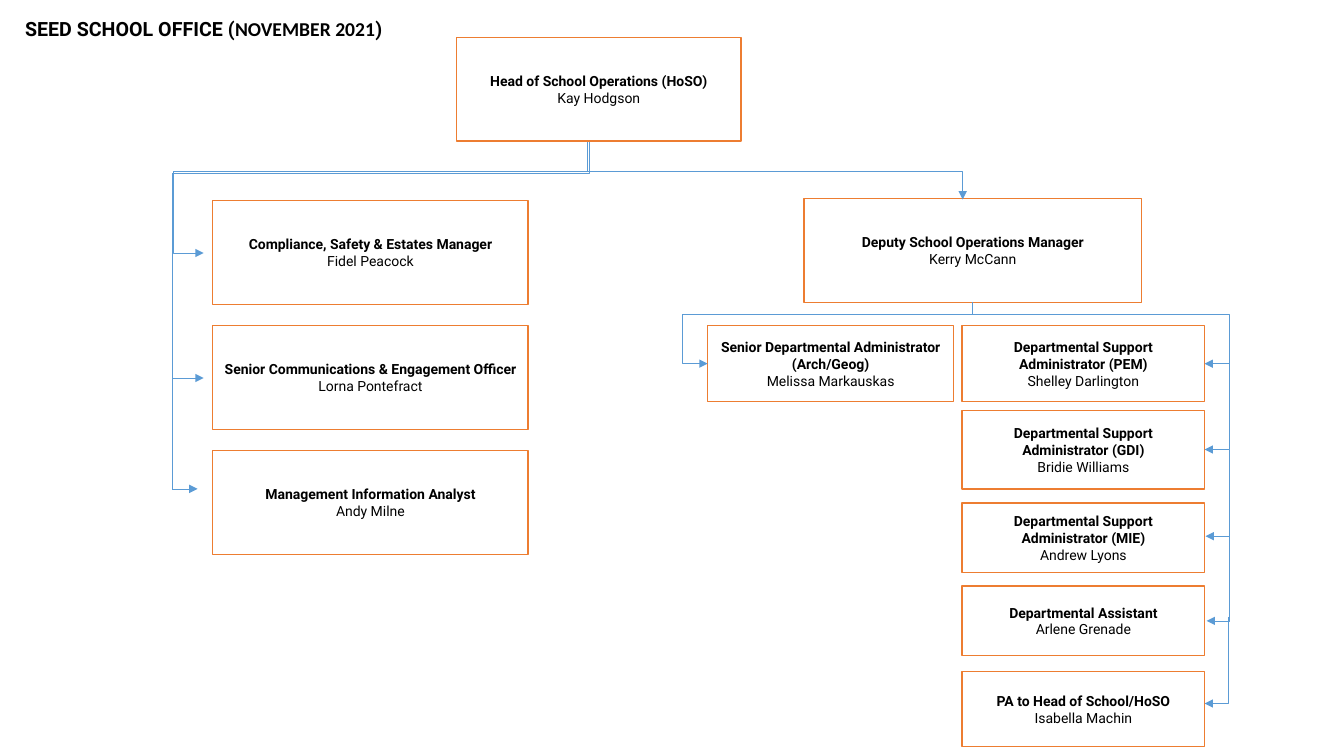
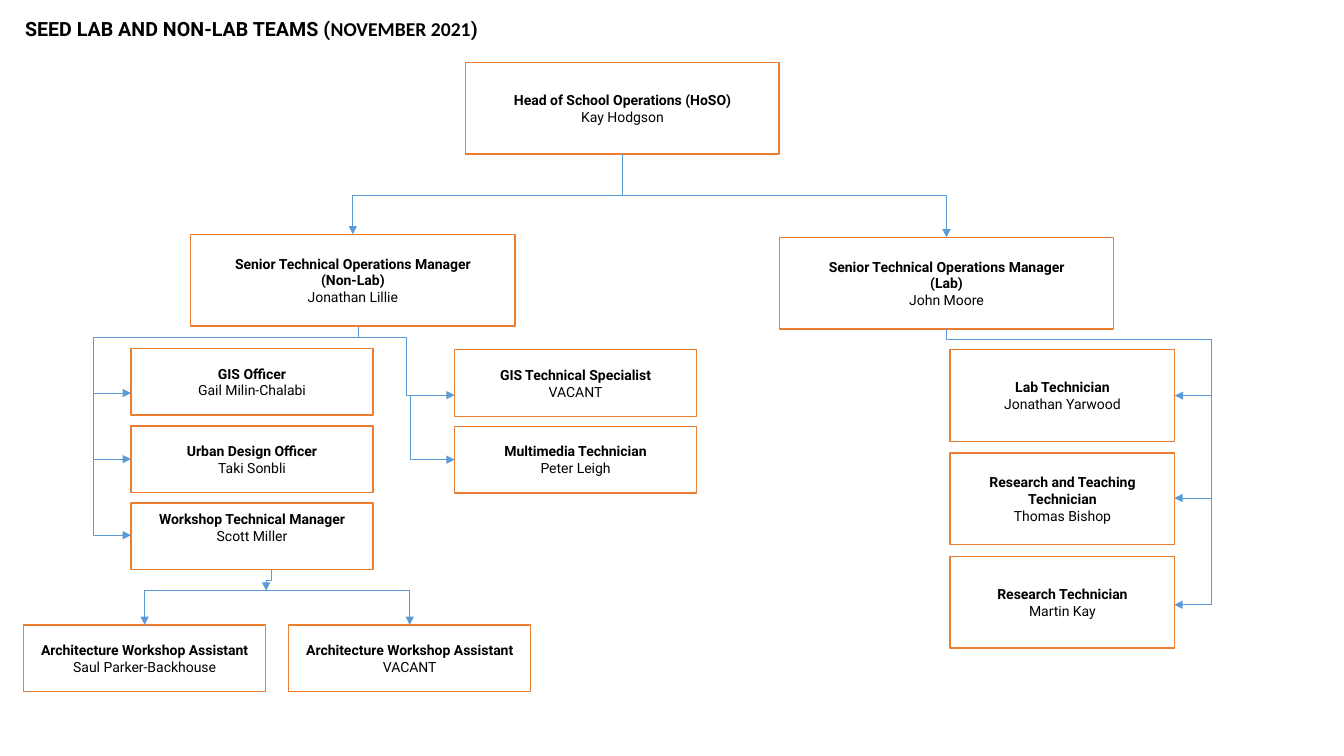
"""Build two organisation charts: the school office and the technical teams."""
from itertools import pairwise
from typing import NamedTuple

from lxml import etree
from pptx import Presentation, util as u
from pptx.dml.color import RGBColor
from pptx.enum import shapes, text
from pptx.oxml.ns import qn

COLUMN = ROW = u.Inches(0.1)
SLIDE_COLUMNS, SLIDE_ROWS = 133.33, 75
BLANK_LAYOUT = 6
QUARTER_TURN = 5400000
ORANGE = RGBColor(0xED, 0x7D, 0x31)
BLUE = RGBColor(0x5B, 0x9B, 0xD5)
BLACK = RGBColor(0, 0, 0)
HEADING_FONT, DATE_FONT = "Roboto", "Calibri"
TOP, LEFT, BOTTOM, RIGHT = range(4)
HEAD = ("Head of School Operations (HoSO)", "Kay Hodgson")


class Side(NamedTuple):
    """The middle of one side of a box."""
    box: object
    index: int


def across(columns):
    """Turn grid columns into a length."""
    return u.Emu(round(columns * COLUMN))


def down(rows):
    """Turn grid rows into a length."""
    return u.Emu(round(rows * ROW))


def style_run(run, size, bold, font=HEADING_FONT):
    """Give a run its font, size, weight and colour."""
    run.font.name = font
    run.font.size = u.Pt(size)
    run.font.bold = bold
    run.font.color.rgb = BLACK


def add_title(slide, team, columns):
    """Write the slide title with the date in its own font."""
    title = slide.shapes.add_textbox(across(1.5), down(1.2), across(columns), down(5))
    title.text_frame.word_wrap = True
    paragraph = title.text_frame.paragraphs[0]
    for words, font in ((f"{team} (", HEADING_FONT), ("NOVEMBER 2021", DATE_FONT), (")", HEADING_FONT)):
        run = paragraph.add_run()
        run.text = words
        style_run(run, 14, True, font)


def add_box(slide, column, row, columns, rows, role, *lines):
    """Draw an outlined box with a bold role above a plain name."""
    box = slide.shapes.add_shape(shapes.MSO_SHAPE.RECTANGLE, across(column), down(row),
                                 across(columns), down(rows))
    box.shadow.inherit = False
    box.fill.background()
    box.line.color.rgb = ORANGE
    box.line.width = u.Pt(1)
    frame = box.text_frame
    frame.word_wrap = True
    frame.vertical_anchor = text.MSO_ANCHOR.MIDDLE
    frame.text = "\n".join((role, *lines))
    for paragraph in frame.paragraphs:
        paragraph.alignment = text.PP_ALIGN.CENTER
        style_run(paragraph.runs[0], 10, True)
    frame.paragraphs[-1].runs[0].font.bold = False
    return box


def add_stack(slide, column, row, columns, rows, pitch, people):
    """Draw equal boxes below each other at an even pitch."""
    return [add_box(slide, column, row + place * pitch, columns, rows, *person)
            for place, person in enumerate(people)]


def locate(stop):
    """Give the position of a grid point or of a box side."""
    if not isinstance(stop, Side):
        return across(stop[0]), down(stop[1])
    box, index = stop
    middle_x, middle_y = box.left + box.width // 2, box.top + box.height // 2
    return {TOP: (middle_x, box.top), LEFT: (box.left, middle_y),
            BOTTOM: (middle_x, box.top + box.height),
            RIGHT: (box.left + box.width, middle_y)}[index]


def style_connector(connector, arrow=True):
    """Make a connector thin and blue, with an arrowhead if wanted."""
    connector.line.color.rgb = BLUE
    connector.line.width = u.Pt(0.5)
    if arrow:
        etree.SubElement(connector.line._get_or_add_ln(), qn("a:tailEnd"), type="triangle")
    etree.SubElement(connector._element.spPr, qn("a:effectLst"))


def add_line(slide, start, finish, arrow):
    """Draw a straight line between two grid points."""
    style_connector(slide.shapes.add_connector(
        shapes.MSO_CONNECTOR.STRAIGHT, *locate(start), *locate(finish)), arrow)


def add_elbow(slide, points):
    """Draw one elbow connector that turns at each inner point."""
    points = [points[0], *(end for begin, end in pairwise(points) if begin != end)]
    start, finish = points[0], points[-1]
    delta = [end - begin for begin, end in zip(start, finish)]
    upright = points[0][0] == points[1][0]
    width, height = (abs(length) for length in (reversed(delta) if upright else delta))
    left = (start[0] + finish[0] - width) // 2
    top = (start[1] + finish[1] - height) // 2
    connector = slide.shapes.add_connector(shapes.MSO_CONNECTOR.ELBOW, left, top,
                                           left + width, top + height)
    frame = connector._element.spPr.find(qn("a:xfrm"))
    if upright:
        frame.set("rot", str(QUARTER_TURN))
    if delta[0] > 0 and upright:
        frame.set("flipV", "1")
    elif delta[0] < 0 and not upright:
        frame.set("flipH", "1")
    geometry = connector._element.spPr.find(qn("a:prstGeom"))
    geometry.set("prst", f"bentConnector{len(points) - 1}")
    guides = geometry.find(qn("a:avLst"))
    if guides is None:
        guides = etree.SubElement(geometry, qn("a:avLst"))
    for turn, point in enumerate(points[1:-2], start=1):
        axis = (turn + upright + 1) % 2
        share = round(100000 * (point[axis] - start[axis]) / delta[axis])
        etree.SubElement(guides, qn("a:gd"), name=f"adj{turn if len(points) > 4 else 1}",
                         fmla=f"val {share}")
        if len(points) == 4:
            break
    style_connector(connector)


def add_drop(slide, start, finish, row):
    """Go down to a row, along it, and down to the finish."""
    (x, y), (end_x, end_y) = locate(start), locate(finish)
    level = down(row)
    add_elbow(slide, [(x, y), (x, level), (end_x, level), (end_x, end_y)])


def add_sweep(slide, start, finish, row, trunk):
    """Go along a row to a trunk column, down it, and sideways to the finish."""
    (x, y), (end_x, end_y) = locate(start), locate(finish)
    level, spine = down(row), across(trunk)
    add_elbow(slide, [(x, y), (x, level), (spine, level), (spine, end_y), (end_x, end_y)])


def add_chain(slide, trunk, row, finishes):
    """Continue a trunk column downwards from one finish to the next."""
    for finish in finishes:
        add_sweep(slide, (trunk, row), finish, row, trunk)
        row = locate(finish)[1] / ROW


def build_office(slide):
    """Draw the school office chart."""
    add_title(slide, "SEED SCHOOL OFFICE", 51.6)
    add_box(slide, 45.3, 3.7, 28.2, 10.3, *HEAD)
    deputy = add_box(slide, 79.75, 19.7, 33.5, 10.3, "Deputy School Operations Manager", "Kerry McCann")
    add_stack(slide, 21.1, 19.9, 31.3, 10.3, 12.4, (
        ("Compliance, Safety & Estates Manager", "Fidel Peacock"),
        ("Senior Communications & Engagement Officer", "Lorna Pontefract"),
        ("Management Information Analyst", "Andy Milne")))
    senior = add_box(slide, 70.2, 32.3, 24.4, 7.55,
                     "Senior Departmental Administrator (Arch/Geog)", "Melissa Markauskas")
    support = [add_box(slide, 95.45, row, 24.05, rows, role, name) for row, rows, role, name in (
        (32.3, 7.55, "Departmental Support Administrator (PEM)", "Shelley Darlington"),
        (40.7, 7.8, "Departmental Support Administrator (GDI)", "Bridie Williams"),
        (49.9, 6.9, "Departmental Support Administrator (MIE)", "Andrew Lyons"),
        (58.15, 6.9, "Departmental Assistant", "Arlene Grenade"),
        (66.65, 7.4, "PA to Head of School/HoSO", "Isabella Machin"))]

    add_sweep(slide, (58.5, 14.1), (20.2, 25.1), 17, 17.2)
    add_sweep(slide, (58.5, 14.1), (20.2, 37.5), 17.2, 17.1)
    add_line(slide, (17.1, 37.5), (17.1, 48.5), False)
    add_line(slide, (17.1, 48.5), (19.6, 48.5), True)
    add_drop(slide, (58.3, 14.1), (95.5, 19.8), 17)
    add_sweep(slide, Side(deputy, BOTTOM), Side(senior, LEFT), 31.2, 67.7)
    first, second = [Side(box, RIGHT) for box in support[:2]]
    add_sweep(slide, Side(deputy, BOTTOM), first, 31.2, 122)
    add_chain(slide, 122, 36, [second, (119.6, 53.2), (119.7, 61.6)])
    add_chain(slide, 121.9, 61.2, [(119.5, 69.8)])


def build_teams(slide):
    """Draw the lab and non-lab teams chart."""
    add_title(slide, "SEED LAB AND NON-LAB TEAMS", 55)
    head = add_box(slide, 46.2, 6.2, 31.1, 9.1, *HEAD)
    lab = add_box(slide, 77.35, 23.55, 33.1, 9.1,
                  "Senior Technical Operations Manager", "(Lab)", "John Moore")
    non_lab = add_box(slide, 18.9, 23.25, 32.2, 9.1,
                      "Senior Technical Operations Manager", "(Non-Lab)", "Jonathan Lillie")
    technicians = add_stack(slide, 94.25, 34.7, 22.3, 9.1, 10.25, (
        ("Lab Technician", "Jonathan Yarwood"),
        ("Research and Teaching Technician", "Thomas Bishop"),
        ("Research Technician", "Martin Kay")))
    _, urban, workshop = add_stack(slide, 13, 34.6, 24, 6.6, 7.65, (
        ("GIS Officer", "Gail Milin-Chalabi"),
        ("Urban Design Officer", "Taki Sonbli"),
        ("Workshop Technical Manager", "Scott Miller")))
    workshop.text_frame.margin_bottom = u.Inches(0.22)
    _, multimedia = add_stack(slide, 45.1, 34.7, 24, 6.6, 7.6, (
        ("GIS Technical Specialist", "VACANT"),
        ("Multimedia Technician", "Peter Leigh")))
    assistants = [add_box(slide, column, 62, 24, 6.6, "Architecture Workshop Assistant", name)
                  for column, name in ((2.35, "Saul Parker-Backhouse"), (28.65, "VACANT"))]

    for manager in (non_lab, lab):
        add_drop(slide, Side(head, BOTTOM), Side(manager, TOP), 19.4)
    add_sweep(slide, Side(lab, BOTTOM), Side(technicians[0], RIGHT), 33.7, 120.2)
    add_chain(slide, 120.2, 39.2, [(116.5, 49.4), (116.5, 60)])
    add_sweep(slide, (35.6, 32.4), (13, 39), 33.5, 9.3)
    add_chain(slide, 9.3, 39, [Side(urban, LEFT), (13, 53.1)])
    add_sweep(slide, (35.6, 33.5), (45.1, 39.2), 33.5, 40.3)
    add_chain(slide, 40.7, 39.2, [Side(multimedia, LEFT)])
    add_drop(slide, (26.9, 56.5), (26.4, 58.6), 57.6)
    for assistant in assistants:
        add_drop(slide, (26.4, 58.6), Side(assistant, TOP), 58.6)


def main():
    """Build and save the presentation."""
    presentation = Presentation()
    presentation.slide_width = across(SLIDE_COLUMNS)
    presentation.slide_height = down(SLIDE_ROWS)
    for build in (build_office, build_teams):
        build(presentation.slides.add_slide(presentation.slide_layouts[BLANK_LAYOUT]))
    presentation.save("out.pptx")


if __name__ == "__main__":
    main()
